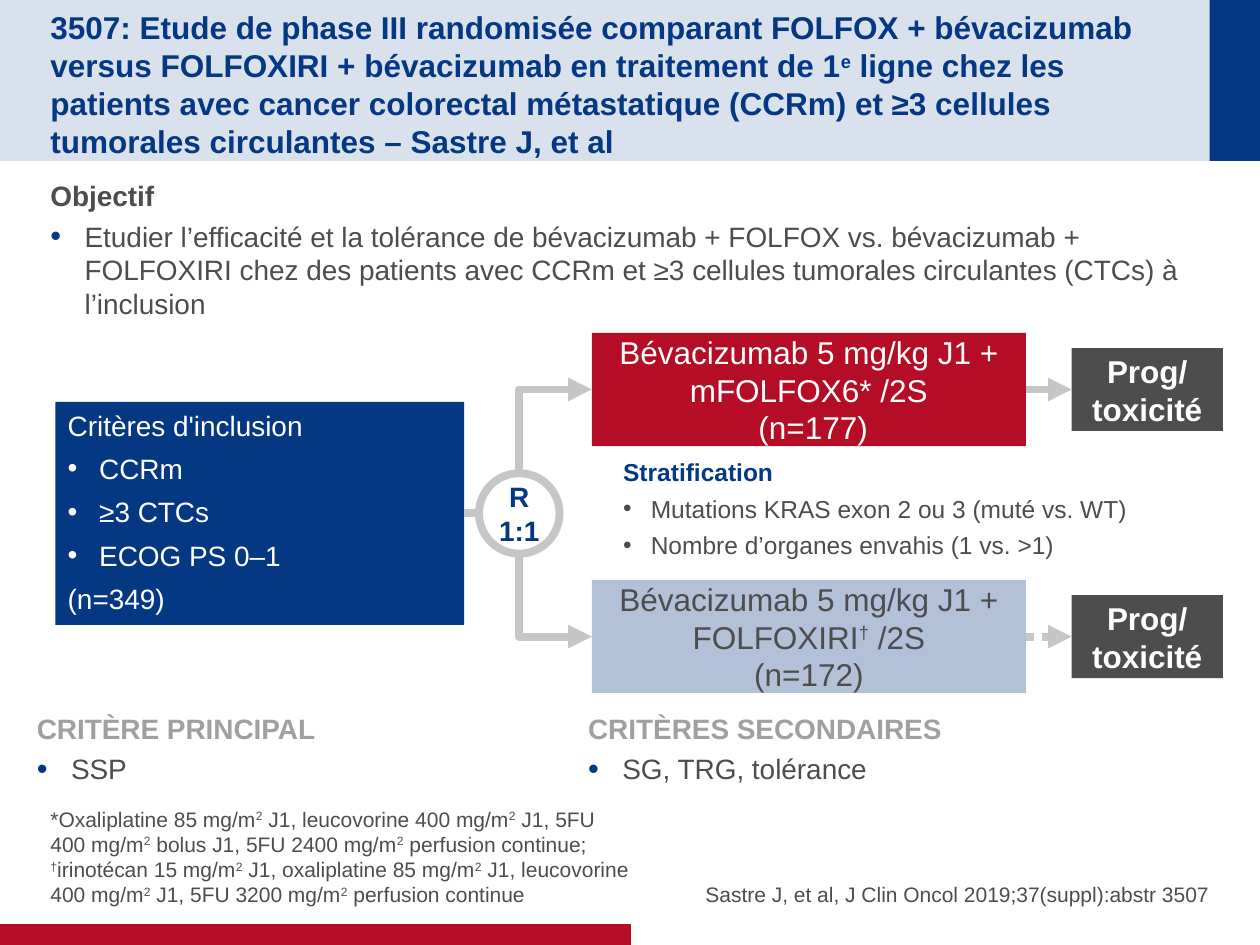
"""Build the slide on the phase III trial comparing FOLFOX and FOLFOXIRI with bevacizumab."""
from lxml.etree import SubElement
from pptx import Presentation
from pptx.dml.color import RGBColor
from pptx.enum.dml import MSO_LINE as Dash
from pptx.enum.shapes import MSO_CONNECTOR as Link, MSO_SHAPE as Shape
from pptx.enum.text import MSO_ANCHOR as Anchor, MSO_AUTO_SIZE as Fit, PP_ALIGN as Align
from pptx.oxml.ns import qn
from pptx.util import Pt

NAVY, RED, GREY, SILVER, WHITE = "043882", "B60D27", "4D4D4D", "C6C6C6", "FFFFFF"
color = RGBColor.from_string

deck = Presentation()
deck.slide_width, deck.slide_height = Pt(720), Pt(540)
slide = deck.slides.add_slide(deck.slide_layouts[5])
shapes = slide.shapes


def add_box(left, top, width, height, fill=None, anchor=Anchor.TOP, side=7.2, edge=3.6):
    """Add a filled rectangle, or a plain text box when there is no fill."""
    area = Pt(left), Pt(top), Pt(width), Pt(height)
    if fill:
        box = shapes.add_shape(Shape.RECTANGLE, *area)
        box.shadow.inherit = False
        box.fill.solid()
        box.fill.fore_color.rgb = color(fill)
        box.line.fill.background()
    else:
        box = shapes.add_textbox(*area)
    frame = box.text_frame
    frame.word_wrap = True
    frame.vertical_anchor = anchor
    frame.margin_left = frame.margin_right = Pt(side)
    frame.margin_top = frame.margin_bottom = Pt(edge)
    return box


def write(box, text, size=16, ink=GREY, bold=False, align=Align.LEFT, after=0,
          indent=0, bullet_ink=None, bullet_size=100):
    """Add one paragraph, where text between carets is superscript."""
    frame = box.text_frame
    paragraph = frame.add_paragraph() if frame.text else frame.paragraphs[0]
    paragraph.alignment = align
    paragraph.space_after = Pt(after)
    if indent:
        props = paragraph._p.get_or_add_pPr()
        props.set("marL", str(Pt(indent)))
        props.set("indent", str(-Pt(indent)))
        SubElement(SubElement(props, qn("a:buClr")), qn("a:srgbClr")).set("val", bullet_ink or ink)
        SubElement(props, qn("a:buSzPct")).set("val", str(bullet_size * 1000))
        SubElement(props, qn("a:buFont")).set("typeface", "Arial")
        SubElement(props, qn("a:buChar")).set("char", "•")
    for part, chunk in enumerate(text.split("^")):
        for row, line in enumerate(chunk.split("\n")):
            if row:
                paragraph.add_line_break()
            if not line:
                continue
            run = paragraph.add_run()
            run.text = line
            run.font.name, run.font.size, run.font.bold = "Arial", Pt(size), bold
            run.font.color.rgb = color(ink)
            if part % 2:
                run.font._element.set("baseline", "30000")


add_box(0, 0, 720, 92, "D9E1EC")
add_box(691.2, 0, 28.8, 92, NAVY)
add_box(0, 528, 360.5, 12, RED)

title = shapes.title
title.left, title.top, title.width, title.height = Pt(28.8), Pt(14.4), Pt(648.5), Pt(63.4)
heading = title.text_frame
heading.auto_size, heading.word_wrap = Fit.NONE, True
heading.vertical_anchor = Anchor.MIDDLE
heading.margin_left = heading.margin_right = heading.margin_bottom = 0
heading.margin_top = Pt(3.6)
write(title, "3507: Etude de phase III randomisée comparant FOLFOX + bévacizumab versus "
      "FOLFOXIRI + bévacizumab en traitement de 1^e^ ligne chez les patients avec cancer "
      "colorectal métastatique (CCRm) et ≥3 cellules tumorales circulantes – Sastre J, et al",
      size=18, ink=NAVY, bold=True)
shapes._spTree.append(title._element)

sections = [
    (28.8, 98.6, 662.4, 90, 0, "Objectif", GREY,
     "Etudier l’efficacité et la tolérance de bévacizumab + FOLFOX vs. bévacizumab + FOLFOXIRI "
     "chez des patients avec CCRm et ≥3 cellules tumorales circulantes (CTCs) à l’inclusion"),
    (21, 403, 325.5, 50, 0, "CRITÈRE PRINCIPAL", "A0A0A0", "SSP"),
    (329, 403, 354, 53, 7.2, "CRITÈRES SECONDAIRES", "A0A0A0", "SG, TRG, tolérance"),
]
for left, top, width, height, side, label, ink, detail in sections:
    section = add_box(left, top, width, height, side=side)
    write(section, label, ink=ink, bold=True, after=4)
    write(section, detail, after=4, indent=19.6, bullet_ink=NAVY, bullet_size=110)

footnote = add_box(28.8, 480.2, 337, 38, anchor=Anchor.BOTTOM, side=0, edge=0)
write(footnote, "*Oxaliplatine 85 mg/m^2^ J1, leucovorine 400 mg/m^2^ J1, 5FU \n"
      "400 mg/m^2^ bolus J1, 5FU 2400 mg/m^2^ perfusion continue; ^†^irinotécan 15 mg/m^2^ J1, "
      "oxaliplatine 85 mg/m^2^ J1, leucovorine 400 mg/m^2^ J1, 5FU 3200 mg/m^2^ perfusion continue",
      size=12, after=4)
citation = add_box(354.2, 480.2, 337, 38, anchor=Anchor.BOTTOM, side=0, edge=0)
write(citation, "Sastre J, et al, J Clin Oncol 2019;37(suppl):abstr 3507",
      size=12, align=Align.RIGHT, after=4)

strata = add_box(349, 257.8, 347, 70.6)
write(strata, "Stratification", size=14, ink=NAVY, bold=True, after=4)
for factor in ("Mutations KRAS exon 2 ou 3 (muté vs. WT)", "Nombre d’organes envahis (1 vs. >1)"):
    write(strata, factor, size=14, after=4, indent=15.8)

inclusion = add_box(31.6, 229.7, 233.6, 127.4, NAVY)
write(inclusion, "Critères d'inclusion", ink=WHITE, after=5.6)
for criterion in ("CCRm", "≥3 CTCs", "ECOG PS 0–1"):
    write(inclusion, criterion, ink=WHITE, after=5.6, indent=18)
write(inclusion, "(n=349)", ink=WHITE, after=5.6)

randomisation = shapes.add_shape(Shape.OVAL, Pt(273.7), Pt(270.4), Pt(46), Pt(46))
randomisation.shadow.inherit = False
randomisation.fill.background()
randomisation.line.color.rgb = color(SILVER)
randomisation.line.width = Pt(4.5)
randomisation.text_frame.word_wrap = False
randomisation.text_frame.vertical_anchor = Anchor.MIDDLE
for line in ("R", "1:1"):
    write(randomisation, line, ink=NAVY, bold=True, align=Align.CENTER)

entry = shapes.add_connector(Link.STRAIGHT, Pt(265.2), Pt(293.4), Pt(273.7), Pt(293.4))
entry.begin_connect(inclusion, 3)
links = [(entry, False)]

arms = [
    (222.6, "Bévacizumab 5 mg/kg J1 + mFOLFOX6* /2S\n (n=177)", RED, WHITE, 270.4,
     {"rot": "5400000", "flipH": "1", "flipV": "1"}, None),
    (363.8, "Bévacizumab 5 mg/kg J1 + FOLFOXIRI^†^ /2S\n(n=172)", "B2C0D8", GREY, 316.4,
     {"rot": "16200000", "flipH": "1"}, Dash.ROUND_DOT),
]
for middle, regimen, fill, ink, start, turn, dash in arms:
    arm = add_box(338.2, middle - 32.4, 248, 64.8, fill, Anchor.MIDDLE, edge=0)
    write(arm, regimen, size=18, ink=ink, align=Align.CENTER)
    outcome = add_box(612.4, middle - 23.7, 86.4, 47.4, GREY, Anchor.MIDDLE, edge=0)
    write(outcome, "Prog/\ntoxicité", size=18, ink=WHITE, bold=True, align=Align.CENTER)

    follow_up = shapes.add_connector(Link.STRAIGHT, Pt(586.2), Pt(middle), Pt(612.4), Pt(middle))
    follow_up.begin_connect(arm, 3)
    follow_up.end_connect(outcome, 1)
    if dash:
        follow_up.line.dash_style = dash

    rise, reach = abs(middle - start), 338.2 - 296.7
    left, top = 296.7 + (reach - rise) / 2, (middle + start - reach) / 2
    branch = shapes.add_connector(Link.ELBOW, Pt(left), Pt(top), Pt(left + rise), Pt(top + reach))
    branch._element.spPr.find(qn("a:prstGeom")).set("prst", "bentConnector2")
    for name, value in turn.items():
        branch._element.spPr.find(qn("a:xfrm")).set(name, value)
    links += [(follow_up, True), (branch, True)]

for link, arrow in links:
    link.line.color.rgb = color(SILVER)
    link.line.width = Pt(4.5)
    if arrow:
        SubElement(link.line._get_or_add_ln(), qn("a:tailEnd")).set("type", "triangle")
    SubElement(link._element.spPr, qn("a:effectLst"))

deck.save("out.pptx")
